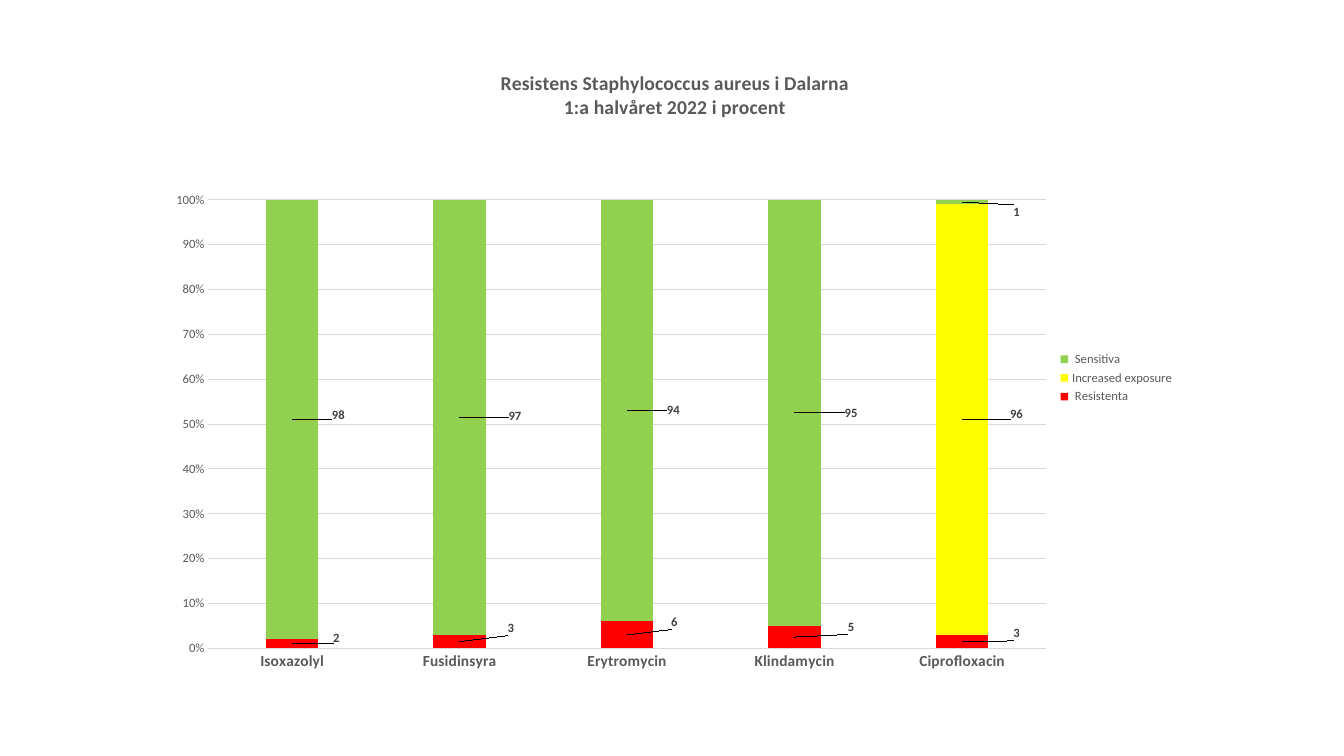
from lxml import etree
from pptx import Presentation
from pptx.chart.data import CategoryChartData
from pptx.dml.color import RGBColor
from pptx.enum.chart import XL_CHART_TYPE, XL_LEGEND_POSITION, XL_TICK_MARK
from pptx.oxml.ns import qn
from pptx.util import Pt

STACKED = XL_CHART_TYPE.COLUMN_STACKED_100
LEGEND_RIGHT = XL_LEGEND_POSITION.RIGHT
NO_TICK = XL_TICK_MARK.NONE

FONT = "Calibri"
GREY = "595959"
RULE = "D9D9D9"
TITLE = ["Resistens Staphylococcus aureus i Dalarna", "1:a halvåret 2022 i procent"]
DRUGS = ["Isoxazolyl", "Fusidinsyra", "Erytromycin", "Klindamycin", "Ciprofloxacin"]
SERIES = [
    {"name": " Resistenta", "color": "FF0000", "values": [2, 3, 6, 5, 3],
     "shifts": {0: (0.043, -0.008), 1: (0.05, -0.02), 2: (0.046, -0.019),
                3: (0.055, -0.015), 4: (0.053, -0.012)}},
    {"name": "Increased exposure", "color": "FFFF00", "values": [0, 0, 0, 0, 96],
     "shifts": {4: (0.053, -0.008)}},
    {"name": " Sensitiva", "color": "92D050", "values": [98, 97, 94, 95, 1],
     "shifts": {0: (0.045, -0.007), 1: (0.054, -0.002), 2: (0.045, 0),
                3: (0.055, 0), 4: (0.053, 0.015)}},
]


def color(hex_code):
    return RGBColor.from_string(hex_code)


def style_font(font, size, hex_code=GREY, bold=False):
    font.name = FONT
    font.size = Pt(size)
    font.bold = bold
    font.color.rgb = color(hex_code)


def style_line(line, hex_code=RULE):
    line.width = Pt(0.75)
    line.color.rgb = color(hex_code)


def add_text(paragraph, text, **style):
    run = paragraph.add_run()
    run.text = text
    style_font(run.font, **style)


def make_layout(**settings):
    layout = etree.Element(qn("c:layout"))
    manual = etree.SubElement(layout, qn("c:manualLayout"))
    for tag, value in settings.items():
        etree.SubElement(manual, qn("c:" + tag)).set("val", str(value))
    return layout


def place(parent, index, **settings):
    for old in parent.findall(qn("c:layout")):
        parent.remove(old)
    parent.insert(index, make_layout(**settings))


presentation = Presentation()
presentation.slide_width = Pt(960)
presentation.slide_height = Pt(540)
slide = presentation.slides.add_slide(presentation.slide_layouts[6])

data = CategoryChartData(number_format="General")
data.categories = DRUGS
for entry in SERIES:
    data.add_series(entry["name"], entry["values"])
chart = slide.shapes.add_chart(
    STACKED, Pt(113.76), Pt(30.96), Pt(732.24), Pt(478.08), data).chart
style_font(chart.font, 10, "000000")

title_frame = chart.chart_title.text_frame
for number, text in enumerate(TITLE):
    paragraph = title_frame.add_paragraph() if number else title_frame.paragraphs[0]
    add_text(paragraph, text, size=14, bold=True)
chart.chart_title.include_in_layout = False
place(chart.chart_title._element, 1, xMode="edge", yMode="edge", x=0.33, y=0.034)

plot = chart.plots[0]
plot.gap_width = 219
plot.overlap = 100
plot.vary_by_categories = False
place(chart._chartSpace.chart.plotArea, 0, layoutTarget="inner", xMode="edge",
      yMode="edge", x=0.048, y=0.234, w=0.817, h=0.67)

category_axis = chart.category_axis
style_font(category_axis.tick_labels.font, 11, bold=True)
style_line(category_axis.format.line)
value_axis = chart.value_axis
style_font(value_axis.tick_labels.font, 9)
value_axis.tick_labels.number_format = "0%"
value_axis.tick_labels.number_format_is_linked = False
value_axis.format.line.fill.background()
value_axis.has_major_gridlines = True
style_line(value_axis.major_gridlines.format.line)
for axis in (category_axis, value_axis):
    axis.major_tick_mark = NO_TICK
    axis.minor_tick_mark = NO_TICK

chart.has_legend = True
chart.legend.position = LEGEND_RIGHT
chart.legend.include_in_layout = False
style_font(chart.legend.font, 9)

for series, entry in zip(plot.series, SERIES):
    series.format.fill.solid()
    series.format.fill.fore_color.rgb = color(entry["color"])
    labels = series.data_labels
    style_font(labels.font, 9, "404040", True)
    labels.show_value = len(entry["shifts"]) == len(DRUGS)
    for index in entry["shifts"]:
        style_font(series.points[index].data_label.font, 9, "404040", True)
    for label, (x, y) in zip(labels._element.findall(qn("c:dLbl")), entry["shifts"].values()):
        place(label, 1, x=x, y=y)

presentation.save("out.pptx")
